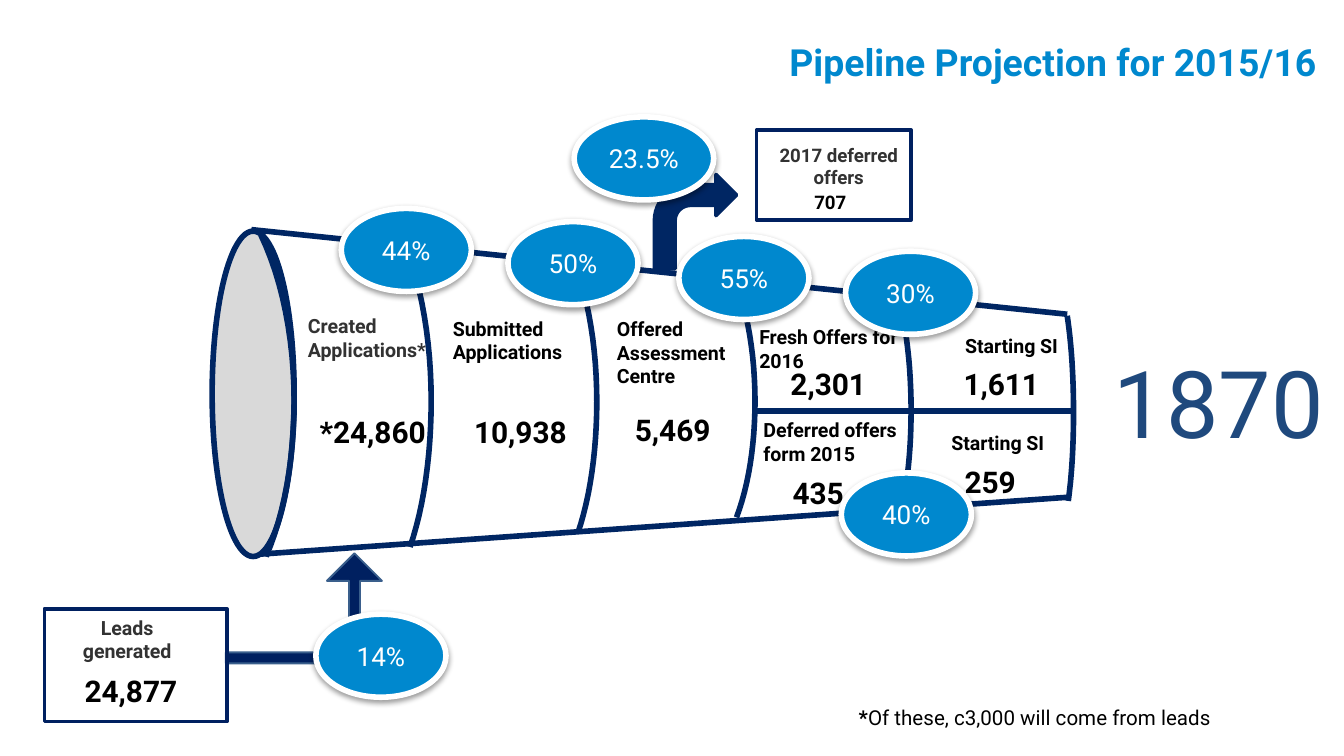
from dataclasses import dataclass

from lxml import etree
from pptx import Presentation
from pptx.dml.color import RGBColor
from pptx.enum.shapes import MSO_CONNECTOR, MSO_SHAPE
from pptx.enum.text import MSO_ANCHOR, MSO_AUTO_SIZE, PP_ALIGN
from pptx.oxml.ns import qn
from pptx.util import Cm, Pt

STRAIGHT = MSO_CONNECTOR.STRAIGHT
OVAL, RECTANGLE = MSO_SHAPE.OVAL, MSO_SHAPE.RECTANGLE
BENT_ARROW, BENT_UP_ARROW = MSO_SHAPE.BENT_ARROW, MSO_SHAPE.BENT_UP_ARROW
LEFT, CENTER, RIGHT = PP_ALIGN.LEFT, PP_ALIGN.CENTER, PP_ALIGN.RIGHT
TOP, MIDDLE = MSO_ANCHOR.TOP, MSO_ANCHOR.MIDDLE
SHAPE_TO_FIT = MSO_AUTO_SIZE.SHAPE_TO_FIT_TEXT

FONT = "Roboto"
COLORS = {
    "navy": "002663",
    "ink": "002060",
    "edge": "3A5F8C",
    "blue": "0088CE",
    "total": "1F497D",
    "mouth": "D9D9D9",
    "grey": "323232",
    "black": "000000",
    "white": "FFFFFF",
}
CURVE_STEPS = 12
BADGE_HEIGHT = 1.57


@dataclass
class Caption:
    text: str
    left: float
    top: float
    width: float
    height: float
    size: float = 10.5
    color: str = "black"
    bold: bool = True
    align: PP_ALIGN = LEFT
    anchor: MSO_ANCHOR = TOP
    inset: bool = True
    wrap: bool = True


@dataclass
class Rate:
    text: str
    left: float
    top: float
    width: float = 2.46


@dataclass
class Divider:
    start: tuple[float, float]
    apex: tuple[float, float]
    end: tuple[float, float]


@dataclass
class Wall:
    start: tuple[float, float]
    end: tuple[float, float]


@dataclass
class Block:
    kind: MSO_SHAPE
    left: float
    top: float
    width: float
    height: float
    fill: str | None
    line: str
    weight: float
    adjustments: tuple[float, ...] = ()


def stage_label(text: str, left: float, top: float, width: float,
                height: float = 0.89, color: str = "black") -> Caption:
    return Caption(text, left, top, width, height, color=color,
                   anchor=MIDDLE, inset=False)


def stage_count(text: str, left: float, top: float, width: float) -> Caption:
    return Caption(text, left, top, width, 0.94, 16, wrap=False)


WALLS = [
    Wall((4.75, 4.34), (20.17, 5.94)),
    Wall((4.7, 10.49), (20.17, 9.4)),
    Wall((14.27, 7.77), (17.22, 7.77)),
    Wall((17.25, 7.77), (20.29, 7.77)),
]
DIVIDERS = [
    Divider((4.93, 4.44), (5.56, 7.59), (5.03, 10.52)),
    Divider((7.65, 4.62), (8.15, 7.57), (7.75, 10.34)),
    Divider((10.85, 4.95), (11.28, 7.59), (10.92, 10.08)),
    Divider((13.87, 5.23), (14.27, 7.59), (13.92, 9.78)),
    Divider((16.97, 5.59), (17.22, 7.75), (17.02, 9.73)),
    Divider((20.17, 5.97), (20.29, 7.8), (20.19, 9.47)),
]
BLOCKS = [
    Block(OVAL, 4.01, 4.37, 1.55, 6.15, "mouth", "navy", 3),
    Block(BENT_UP_ARROW, 4.27, 10.46, 2.95, 2.08, "ink", "edge", 1, (0.1, 0.25, 0.25)),
    Block(RECTANGLE, 0.84, 11.51, 3.45, 2.13, None, "ink", 2),
    Block(RECTANGLE, 14.3, 2.46, 2.92, 1.7, None, "ink", 2),
    Block(BENT_ARROW, 12.37, 3.3, 1.55, 1.78, "navy", "navy", 2),
]
CAPTIONS = [
    Caption("Pipeline Projection for 2015/16", 10.92, -0.03, 14.22, 2.39, 20,
            "blue", align=RIGHT, anchor=MIDDLE),
    stage_label("Created Applications*", 5.82, 5.94, 2.49, color="grey"),
    stage_label("Submitted\nApplications", 8.56, 5.99, 2.36),
    stage_label("Offered\nAssessment\nCentre", 11.66, 5.99, 2.39, 1.35),
    stage_label("Fresh Offers for 2016", 14.35, 6.15, 2.74),
    stage_label("Starting SI", 18.24, 6.3, 2.21, 0.46),
    stage_label("Deferred offers form 2015", 14.43, 7.9, 2.82),
    stage_label("Starting SI", 17.98, 8.13, 2.21, 0.46),
    stage_count("*24,860", 5.79, 7.7, 2.64),
    stage_count("10,938", 8.71, 7.7, 2.39),
    stage_count("5,469", 11.75, 7.65, 2.1),
    stage_count("2,301", 14.69, 6.78, 2.1),
    stage_count("435", 14.73, 8.84, 1.6),
    stage_count("1,611", 17.96, 6.78, 2.1),
    stage_count("259", 17.98, 8.64, 1.6),
    stage_count("24,877", 1.35, 12.6, 2.39),
    Caption("Leads generated", 1.04, 11.51, 2.73, 1.14, color="grey", align=CENTER),
    Caption("2017 deferred offers", 14.2, 2.59, 3.3, 1.12, 10, "grey", align=CENTER),
    Caption("707", 15.14, 3.48, 1.27, 0.69, 10),
    Caption("1870", 20.8, 6.4, 4.6, 2.39, 50, "total", bold=False),
]
FOOTNOTE = Caption("*", 15.98, 13.21, 8, 0.74, 11)
RATES = [
    Rate("50%", 9.6, 4.19),
    Rate("30%", 15.98, 4.75),
    Rate("55%", 12.83, 4.47),
    Rate("44%", 6.45, 3.94),
    Rate("40%", 15.9, 8.94),
    Rate("14%", 5.97, 11.61),
    Rate("23.5%", 10.85, 2.21, 2.64),
]


def rgb(name: str) -> RGBColor:
    return RGBColor.from_string(COLORS[name])


def style_run(run, size: float, color: str, bold: bool) -> None:
    run.font.name = FONT
    run.font.size = Pt(size)
    run.font.bold = bold
    run.font.color.rgb = rgb(color)


def style_line(line, color: str, weight: float) -> None:
    line.color.rgb = rgb(color)
    line.width = Pt(weight)


def clear_insets(frame) -> None:
    frame.margin_left = frame.margin_right = Cm(0)
    frame.margin_top = frame.margin_bottom = Cm(0)


def draw_caption(shapes, caption: Caption):
    box = shapes.add_textbox(Cm(caption.left), Cm(caption.top),
                             Cm(caption.width), Cm(caption.height))
    frame = box.text_frame
    frame.word_wrap = caption.wrap
    frame.vertical_anchor = caption.anchor
    if not caption.wrap:
        frame.auto_size = SHAPE_TO_FIT
    if not caption.inset:
        clear_insets(frame)
    paragraph = frame.paragraphs[0]
    paragraph.text = caption.text
    paragraph.alignment = caption.align
    for run in paragraph.runs:
        style_run(run, caption.size, caption.color, caption.bold)
    return paragraph


def draw_block(shapes, block: Block):
    shape = shapes.add_shape(block.kind, Cm(block.left), Cm(block.top),
                             Cm(block.width), Cm(block.height))
    shape.shadow.inherit = False
    if block.fill:
        shape.fill.solid()
        shape.fill.fore_color.rgb = rgb(block.fill)
    else:
        shape.fill.background()
    style_line(shape.line, block.line, block.weight)
    for index, value in enumerate(block.adjustments):
        shape.adjustments[index] = value
    return shape


def draw_rate(shapes, rate: Rate) -> None:
    badge = draw_block(shapes, Block(OVAL, rate.left, rate.top, rate.width,
                                     BADGE_HEIGHT, "blue", "white", 3))
    effects = badge._element.spPr.find(qn("a:effectLst"))
    shadow = etree.SubElement(effects, qn("a:outerShdw"), blurRad=str(Pt(3.1)),
                              dist=str(Pt(1.6)), dir="5400000", rotWithShape="0")
    tint = etree.SubElement(shadow, qn("a:srgbClr"), val=COLORS["black"])
    etree.SubElement(tint, qn("a:alpha"), val="38000")
    frame = badge.text_frame
    clear_insets(frame)
    frame.vertical_anchor = MIDDLE
    frame.text = rate.text
    frame.paragraphs[0].alignment = CENTER
    style_run(frame.paragraphs[0].runs[0], 14, "white", False)


def draw_wall(shapes, wall: Wall) -> None:
    connector = shapes.add_connector(STRAIGHT, *map(Cm, wall.start + wall.end))
    style_line(connector.line, "navy", 3)
    etree.SubElement(connector._element.spPr, qn("a:effectLst"))


def half_curve(end: tuple[float, float], apex: tuple[float, float]) -> list[tuple[int, int]]:
    (x, y), (apex_x, apex_y) = end, apex
    dx, dy = apex_x - x, apex_y - y
    controls = [end, (x + 0.65 * dx, y + 0.27 * dy), (apex_x, y + 0.63 * dy), apex]
    points = []
    for step in range(CURVE_STEPS + 1):
        t = step / CURVE_STEPS
        weights = ((1 - t) ** 3, 3 * t * (1 - t) ** 2, 3 * t * t * (1 - t), t ** 3)
        points.append(tuple(Cm(sum(w * c[axis] for w, c in zip(weights, controls)))
                            for axis in (0, 1)))
    return points


def draw_divider(shapes, divider: Divider) -> None:
    upper = half_curve(divider.start, divider.apex)
    lower = half_curve(divider.end, divider.apex)[::-1]
    builder = shapes.build_freeform(*upper[0])
    builder.add_line_segments(upper[1:] + lower[1:], close=False)
    arc = builder.convert_to_shape()
    arc.shadow.inherit = False
    arc.fill.background()
    style_line(arc.line, "navy", 3)


def main() -> None:
    prs = Presentation()
    prs.slide_width, prs.slide_height = Cm(25.4), Cm(14.29)
    shapes = prs.slides.add_slide(prs.slide_layouts[6]).shapes
    for wall in WALLS:
        draw_wall(shapes, wall)
    for block in BLOCKS:
        draw_block(shapes, block)
    for divider in DIVIDERS:
        draw_divider(shapes, divider)
    for caption in CAPTIONS:
        draw_caption(shapes, caption)
    remark = draw_caption(shapes, FOOTNOTE).add_run()
    remark.text = "Of these, c3,000 will come from leads"
    style_run(remark, FOOTNOTE.size, FOOTNOTE.color, False)
    for rate in RATES:
        draw_rate(shapes, rate)
    prs.save("out.pptx")


if __name__ == "__main__":
    main()
